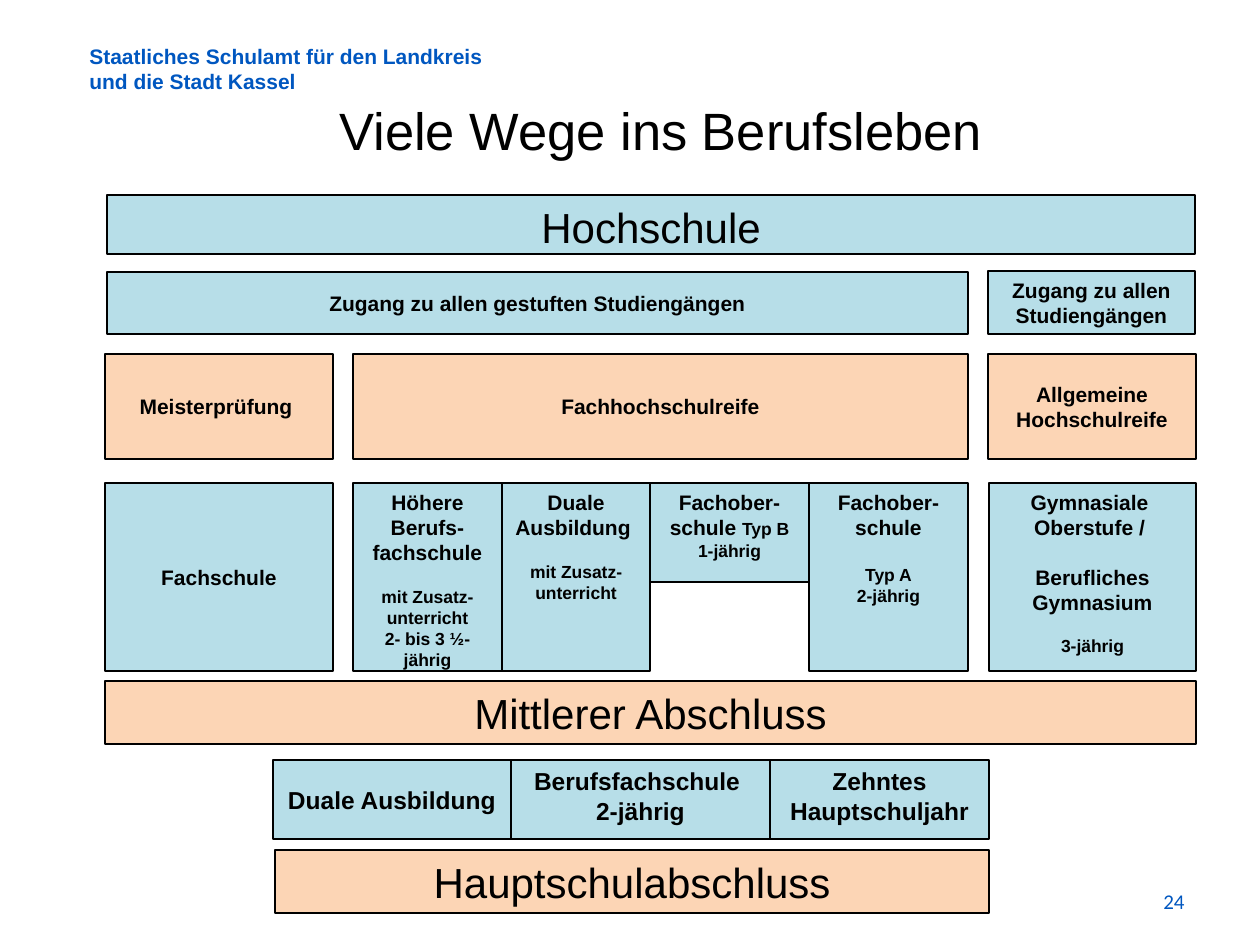
from dataclasses import dataclass
from pptx import Presentation
from pptx.dml.color import RGBColor
from pptx.enum.shapes import MSO_SHAPE
from pptx.enum.text import MSO_ANCHOR, MSO_AUTO_SIZE, PP_ALIGN
from pptx.util import Emu, Pt

RECT = MSO_SHAPE.RECTANGLE
TOP, MID = MSO_ANCHOR.TOP, MSO_ANCHOR.MIDDLE
LEFT, CENTER, RIGHT = PP_ALIGN.LEFT, PP_ALIGN.CENTER, PP_ALIGN.RIGHT
FIT = MSO_AUTO_SIZE.SHAPE_TO_FIT_TEXT
SCALE = 914400 / 126


@dataclass(frozen=True)
class Theme:
    black: str = "000000"
    blue: str = "0057C0"
    school: str = "B7DEE8"
    degree: str = "FCD5B5"
    font: str = "Arial"
    digit: str = "Calibri"
    title: int = 30
    band: int = 24
    large: int = 14
    body: int = 12
    small: int = 10
    line: float = 0.75


def px(*nums):
    return [Emu(round(n * SCALE)) for n in nums]


def rgb(color):
    return RGBColor.from_string(color)


class Page:
    def __init__(self, theme, slide):
        self.theme = theme
        self.slide = slide

    def fill_text(self, frame, paras, size, bold=True, color=None, font=None,
                  align=CENTER, anchor=TOP):
        frame.word_wrap = True
        frame.vertical_anchor = anchor
        for num, para in enumerate(paras):
            line = frame.add_paragraph() if num else frame.paragraphs[0]
            line.alignment = align
            gap, *runs = para if isinstance(para, tuple) else (0, para)
            if gap:
                line.space_before = Pt(gap)
            for item in runs:
                text, points = item if isinstance(item, tuple) else (item, size)
                run = line.add_run()
                run.text = text
                run.font.name = font or self.theme.font
                run.font.size = Pt(points)
                run.font.bold = bold
                run.font.color.rgb = rgb(color or self.theme.black)

    def title(self, area, text):
        shape = self.slide.shapes.title
        shape.left, shape.top, shape.width, shape.height = px(*area)
        self.fill_text(shape.text_frame, [text], self.theme.title, bold=False)
        shape.text_frame.auto_size = FIT

    def label(self, area, paras, **style):
        box = self.slide.shapes.add_textbox(*px(*area))
        self.fill_text(box.text_frame, paras, self.theme.body,
                       color=self.theme.blue, **style)

    def box(self, area, fill, paras, size=None, **style):
        shape = self.slide.shapes.add_shape(RECT, *px(*area))
        shape.shadow.inherit = False
        shape.fill.solid()
        shape.fill.fore_color.rgb = rgb(fill)
        shape.line.color.rgb = rgb(self.theme.black)
        shape.line.width = Pt(self.theme.line)
        self.fill_text(shape.text_frame, paras, size or self.theme.body,
                       **style)

    def band(self, area, fill, text):
        self.box(area, fill, [text], self.theme.band, bold=False)

    def row(self, left, top, cells, size=None):
        for width, height, anchor, paras in cells:
            self.box((left, top, width, height), self.theme.school, paras,
                     size, anchor=anchor)
            left += width


def main():
    theme = Theme()
    deck = Presentation()
    deck.slide_width, deck.slide_height = px(1260, 945)
    page = Page(theme, deck.slides.add_slide(deck.slide_layouts[5]))

    def small(text, gap=0):
        return gap, (text, theme.small)

    page.label((77, 37, 534, 63),
               ["Staatliches Schulamt für den Landkreis",
                "und die Stadt Kassel"], align=LEFT)
    page.label((903, 876, 294, 50), ["24"], bold=False, font=theme.digit,
               align=RIGHT, anchor=MID)
    page.title((291, 92, 740, 77), "Viele Wege ins Berufsleben")

    page.band((107, 195, 1088, 59), theme.school, "Hochschule")
    page.band((105, 681, 1091, 63), theme.degree, "Mittlerer Abschluss")
    page.band((275, 850, 714, 63), theme.degree, "Hauptschulabschluss")

    page.box((107, 272, 861, 62), theme.school,
             ["Zugang zu allen gestuften Studiengängen"], anchor=MID)
    page.box((988, 271, 207, 63), theme.school,
             ["Zugang zu allen Studiengängen"])

    for left, width, paras in (
            (105, 228, ["Meisterprüfung "]),
            (353, 615, ["Fachhochschulreife"]),
            (988, 208, ["Allgemeine", "Hochschulreife"])):
        page.box((left, 354, width, 105), theme.degree, paras, anchor=MID)

    page.row(105, 483, [(228, 188, MID, ["Fachschule"])])
    page.row(353, 483, [
        (149, 188, TOP, ["Höhere Berufs-", "fachschule",
                         small("mit Zusatz-", 12), small("unterricht"),
                         small("2- bis 3 ½-jährig")]),
        (148, 188, TOP, ["Duale Ausbildung ", small("mit Zusatz-", 12),
                         small("unterricht")]),
        (159, 99, TOP, [(0, "Fachober-schule ",
                         ("Typ B 1-jährig", theme.small))]),
        (159, 188, TOP, ["Fachober-schule", small("Typ A", 14),
                         small("2-jährig")])])
    page.row(989, 483, [
        (207, 188, TOP, ["Gymnasiale ", "Oberstufe / ",
                         (14, "Berufliches Gymnasium"),
                         small("3-jährig", 12)])])

    page.row(273, 760, [
        (238, 79, MID, ["Duale Ausbildung"]),
        (259, 79, TOP, ["Berufsfachschule ", "2-jährig"]),
        (219, 79, TOP, ["Zehntes Hauptschuljahr"])], theme.large)

    deck.save("out.pptx")


if __name__ == "__main__":
    main()
